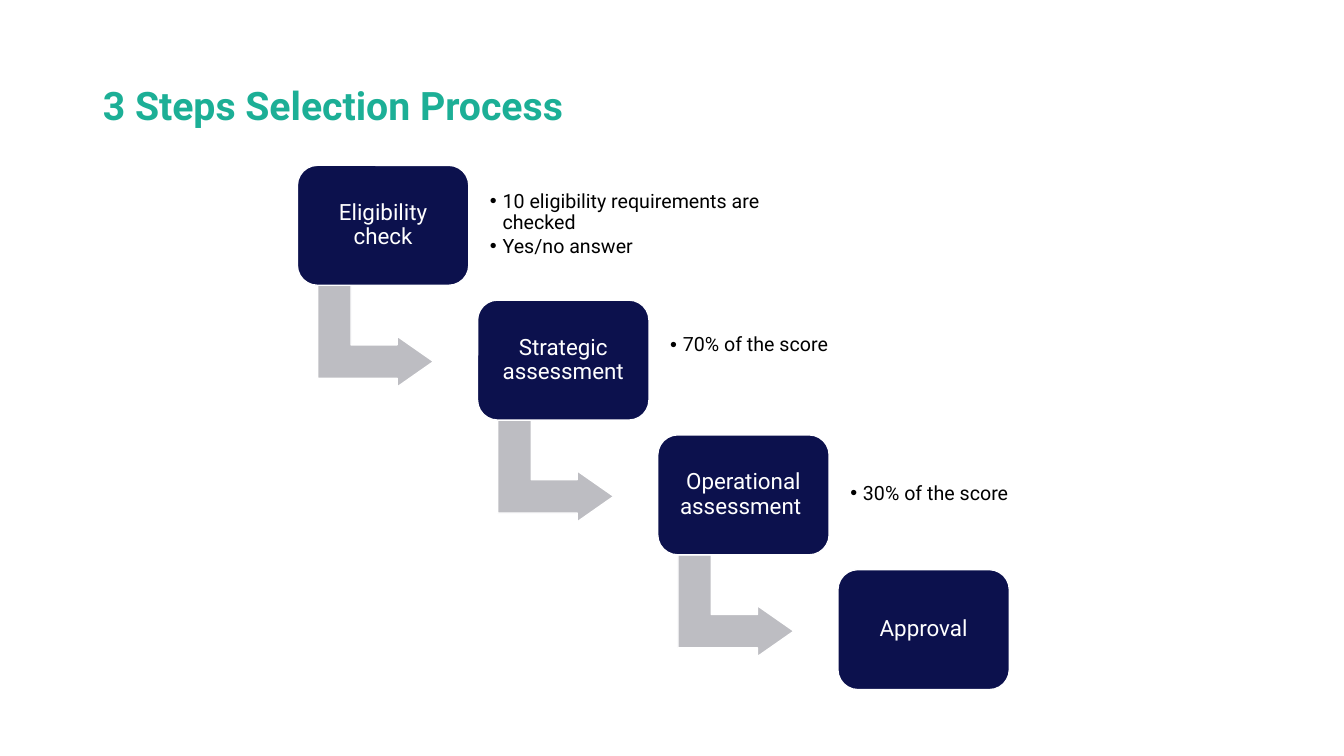
from pptx import Presentation
from pptx import util as u
from pptx.dml.color import RGBColor
from pptx.enum import shapes, text
from pptx.oxml.ns import qn
from lxml import etree

FONT = "Roboto"
TEAL, NAVY, GREY, WHITE, BLACK = "1CAF96", "0C114D", "BDBDC2", "FFFFFF", "000000"

# Staircase grid: each step moves one column right and one row down
LEFT, TOP = 2.95, 1.64
COLUMN, ROW = 1.787, 1.337
STEP_W, STEP_H = 1.7, 1.19

# Step label, its criteria, and the bottom inset of the criteria list
STEPS = [
    ("Eligibility check",
     ["10 eligibility requirements are checked", "Yes/no answer"], 0.06),
    ("Strategic assessment", ["70% of the score"], 0.34),
    ("Operational assessment ", ["30% of the score"], 0.06),
    ("Approval", [], 0.06),
]


def color(hex_value):
    return RGBColor.from_string(hex_value)


def place(shape, left, top, width, height):
    shape.left, shape.top = u.Inches(left), u.Inches(top)
    shape.width, shape.height = u.Inches(width), u.Inches(height)


def set_frame(frame, anchor, left, top, right, bottom):
    frame.word_wrap = True
    frame.auto_size = text.MSO_AUTO_SIZE.NONE
    frame.vertical_anchor = anchor
    frame.margin_left, frame.margin_top = u.Inches(left), u.Inches(top)
    frame.margin_right, frame.margin_bottom = u.Inches(right), u.Inches(bottom)


def write(paragraph, words, size, hex_value, align, bold=False):
    paragraph.alignment = align
    paragraph.line_spacing = 0.9
    paragraph.space_before = u.Pt(0)
    run = paragraph.add_run()
    run.text = words
    run.font.name, run.font.size, run.font.bold = FONT, u.Pt(size), bold
    run.font.color.rgb = color(hex_value)


def add_bullet(paragraph):
    properties = paragraph._p.get_or_add_pPr()
    indent = u.Inches(0.125)
    properties.set("marL", str(indent))
    properties.set("indent", str(-indent))
    etree.SubElement(properties, qn("a:buFont")).set("typeface", "Arial")
    etree.SubElement(properties, qn("a:buChar")).set("char", "•")


def add_block(slide, preset, box, fill, adjustments):
    block = slide.shapes.add_shape(preset, 0, 0, 0, 0)
    place(block, *box)
    block.shadow.inherit = False
    block.fill.solid()
    block.fill.fore_color.rgb = color(fill)
    block.line.color.rgb = color(WHITE)
    block.line.width = u.Pt(1)
    for index, value in enumerate(adjustments):
        block.adjustments[index] = value
    return block


def add_step(slide, left, top, label):
    step = add_block(slide, shapes.MSO_SHAPE.ROUNDED_RECTANGLE,
                     (left, top, STEP_W, STEP_H), NAVY, [0.167])
    set_frame(step.text_frame, text.MSO_ANCHOR.MIDDLE, 0.07, 0.07, 0.07, 0.07)
    write(step.text_frame.paragraphs[0], label, 16, WHITE, text.PP_ALIGN.CENTER)


def add_turn(slide, left, top):
    turn = add_block(slide, shapes.MSO_SHAPE.BENT_UP_ARROW,
                     (left + 0.27, top + 1.12, 1.01, 1.15), GREY,
                     [0.328, 0.25, 0.358])
    turn.rotation = 90


def fill_criteria(body, left, top, criteria, bottom_inset):
    place(body, left + 1.85, top + 0.11, 2.81, 0.96)
    frame = body.text_frame
    set_frame(frame, text.MSO_ANCHOR.MIDDLE, 0.06, 0.06, 0.06, bottom_inset)
    for index, criterion in enumerate(criteria):
        paragraph = frame.add_paragraph() if index else frame.paragraphs[0]
        write(paragraph, criterion, 14, BLACK, text.PP_ALIGN.LEFT)
        paragraph.space_after = u.Pt(2)
        add_bullet(paragraph)


def fill_title(title):
    place(title, 0.92, 0.4, 11.5, 1.29)
    set_frame(title.text_frame, text.MSO_ANCHOR.TOP, 0.1, 0.46, 0.1, 0.05)
    write(title.text_frame.paragraphs[0], "3 Steps Selection Process", 28, TEAL,
          text.PP_ALIGN.LEFT, bold=True)


def main():
    deck = Presentation()
    deck.slide_width, deck.slide_height = u.Inches(13.33), u.Inches(7.5)
    # The comparison layout offers a title and four bodies
    slide = deck.slides.add_slide(deck.slide_layouts[4])
    title, *bodies = slide.placeholders
    fill_title(title)

    # Steps with their criteria and the turns between them
    for index, (label, criteria, bottom_inset) in enumerate(STEPS):
        left, top = LEFT + index * COLUMN, TOP + index * ROW
        if index < len(STEPS) - 1:
            add_turn(slide, left, top)
        add_step(slide, left, top, label)
        body = bodies[index]
        if criteria:
            fill_criteria(body, left, top, criteria, bottom_inset)
        else:
            body.element.getparent().remove(body.element)

    deck.save("out.pptx")


if __name__ == "__main__":
    main()
